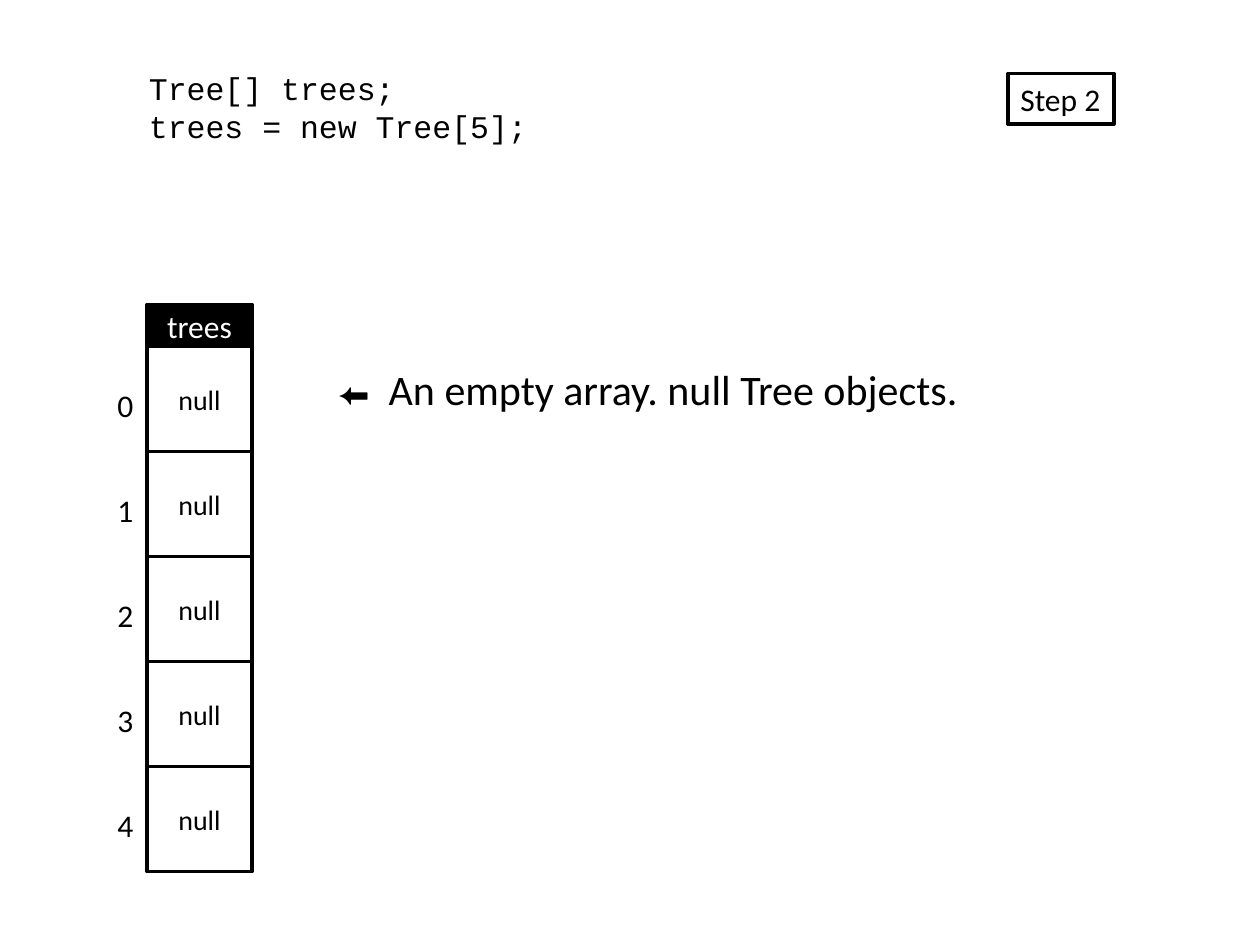
import pptx
import pptx.dml.color
import pptx.enum.shapes
import pptx.enum.text
import pptx.util

Pt = pptx.util.Pt
ALIGN = pptx.enum.text.PP_ALIGN
ANCHOR = pptx.enum.text.MSO_ANCHOR
BLACK, WHITE = "000000", "FFFFFF"


def rgb(color):
    """Return the colour for a hex string."""
    return pptx.dml.color.RGBColor.from_string(color)


def write(tf, lines, size=18, font="Calibri", color=BLACK,
          align=ALIGN.LEFT, anchor=ANCHOR.TOP, fit=False):
    """Fill a text frame with lines, each a string or a list of (text, size) runs."""
    tf.word_wrap = not fit
    tf.vertical_anchor = anchor
    if fit:
        tf.auto_size = pptx.enum.text.MSO_AUTO_SIZE.SHAPE_TO_FIT_TEXT
    for i, line in enumerate(lines):
        p = tf.add_paragraph() if i else tf.paragraphs[0]
        p.alignment = align
        for text, run_size in [(line, size)] if isinstance(line, str) else line:
            r = p.add_run()
            r.text = text
            r.font.size = Pt(run_size)
            r.font.name = font
            r.font.color.rgb = rgb(color)


def add_text(s, box, lines, **fmt):
    """Add a text box that fits its text."""
    sp = s.shapes.add_textbox(*map(Pt, box))
    write(sp.text_frame, lines, fit=True, **fmt)
    return sp


def add_box(s, box, text, fill=WHITE, **fmt):
    """Add an outlined rectangle with text."""
    sp = s.shapes.add_shape(pptx.enum.shapes.MSO_SHAPE.RECTANGLE, *map(Pt, box))
    sp.shadow.inherit = False
    sp.fill.solid()
    sp.fill.fore_color.rgb = rgb(fill)
    sp.line.color.rgb = rgb(BLACK)
    sp.line.width = Pt(2)
    write(sp.text_frame, [text], **fmt)


def add_array(s, box, name, values):
    """Draw a named array as a header over a column of indexed cells."""
    left, top, width, height = box
    header = 24
    cell = (height - header) / len(values)
    centred = {"align": ALIGN.CENTER, "anchor": ANCHOR.MIDDLE}
    add_box(s, (left, top, width, header), name, fill=BLACK, color=WHITE, **centred)
    for i, value in enumerate(values):
        y = top + header + i * cell
        add_box(s, (left, y, width, cell), value, size=16, **centred)
        add_text(s, (left - 24, y + 19, 23.5, 29), [str(i)])


def add_note(s, box, text):
    """Place a remark with a hanging arrow in front of it."""
    sp = add_text(s, box, [[("⬅", 18), ("\t" + text, 24)]])
    pPr = sp.text_frame.paragraphs[0]._p.get_or_add_pPr()
    pPr.set("marL", str(Pt(29)))
    pPr.set("indent", str(-Pt(29)))


def main():
    """Build and save the slide."""
    prs = pptx.Presentation()
    prs.slide_width, prs.slide_height = Pt(720), Pt(540)
    s = prs.slides.add_slide(prs.slide_layouts[6])
    add_text(s, (78, 36, 232, 51), ["Tree[] trees;", "trees = new Tree[5];"],
             font="Courier New")
    add_array(s, (84, 174, 60, 324), "trees", ["null"] * 5)
    add_note(s, (186, 204, 373, 36), "An empty array. null Tree objects.")
    add_box(s, (576, 42, 60.5, 29), "Step 2", fit=True)
    prs.save("out.pptx")


if __name__ == "__main__":
    main()
